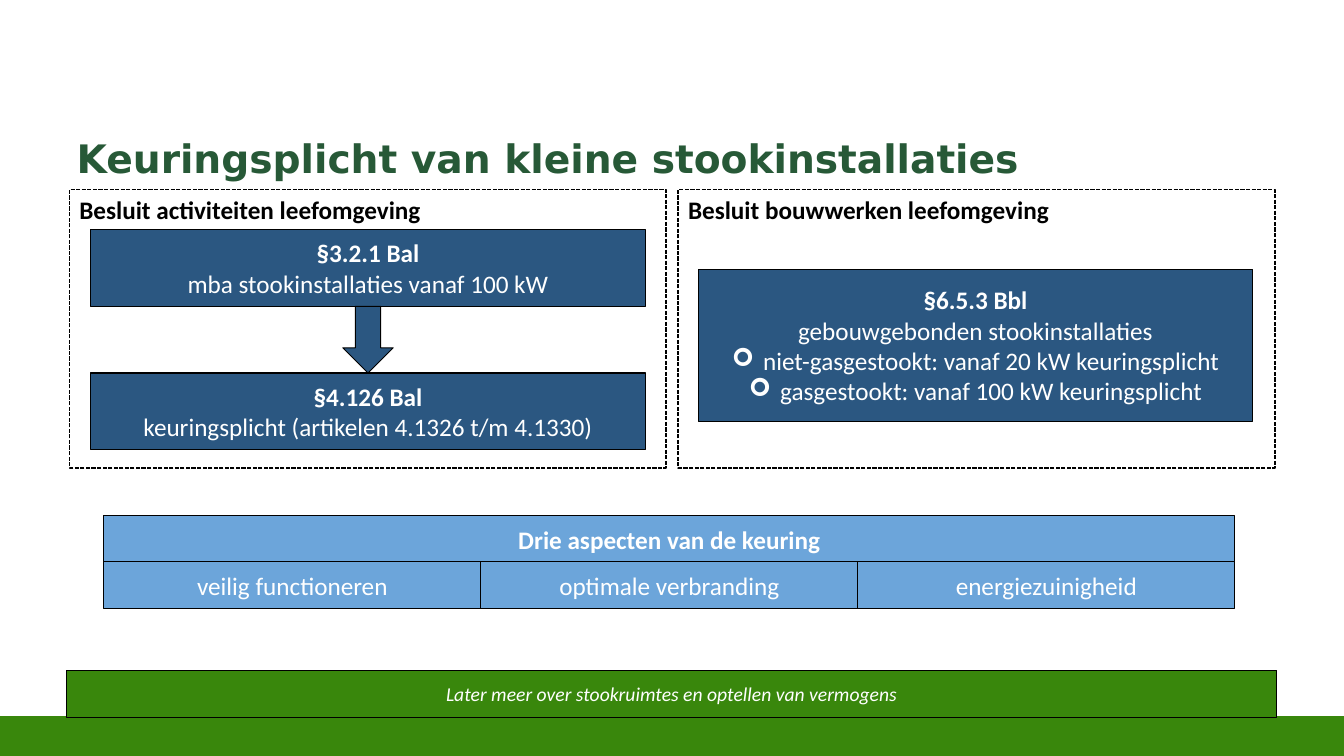
from lxml import etree
from pptx import Presentation
from pptx import util as u
from pptx.dml.color import RGBColor
from pptx.enum import dml, shapes, text
from pptx.oxml.ns import qn

GREEN, BLUE, LIGHT_BLUE = "39870C", "2B5781", "6CA5DA"
WHITE, BLACK, TITLE_GREEN = "FFFFFF", "000000", "275937"
BULLET = "➢"


def set_color(color_format, value):
    color_format.rgb = RGBColor.from_string(value)


def style_font(font, size, color, name="Calibri", bold=False, italic=False):
    font.name, font.size, font.bold, font.italic = name, u.Pt(size), bold, italic
    set_color(font.color, color)


def add_box(slide, left, top, width, height, fill=None, line=BLACK, weight=0.75,
            kind=shapes.MSO_SHAPE.RECTANGLE):
    shape = slide.shapes.add_shape(kind, u.Cm(left), u.Cm(top), u.Cm(width), u.Cm(height))
    shape.shadow.inherit = False
    if fill:
        shape.fill.solid()
        set_color(shape.fill.fore_color, fill)
    else:
        shape.fill.background()
    set_color(shape.line.color, line)
    shape.line.width = u.Pt(weight)
    return shape


def add_bullet(paragraph):
    properties = paragraph._p.get_or_add_pPr()
    properties.set("marL", str(u.Cm(0.79)))
    properties.set("indent", str(-u.Cm(0.79)))
    font = etree.SubElement(properties, qn("a:buFont"))
    font.set("typeface", "Wingdings")
    etree.SubElement(properties, qn("a:buChar")).set("char", BULLET)


def write_lines(shape, lines, heading=True, size=18, italic=False, color=WHITE,
                align=text.PP_ALIGN.CENTER, anchor=text.MSO_ANCHOR.MIDDLE, bullets_from=None):
    frame = shape.text_frame
    frame.word_wrap = True
    frame.vertical_anchor = anchor
    for index, line in enumerate(lines):
        paragraph = frame.paragraphs[0] if index == 0 else frame.add_paragraph()
        paragraph.text = line
        paragraph.alignment = align
        if bullets_from is not None and index >= bullets_from:
            add_bullet(paragraph)
        style_font(paragraph.font, size, color, bold=heading and index == 0, italic=italic)


def add_title(slide, words):
    title = slide.shapes.title
    title.left, title.top, title.width, title.height = (
        u.Cm(1.68), u.Cm(3.25), u.Cm(30.48), u.Cm(1.85))
    frame = title.text_frame
    frame.text = words
    frame.word_wrap = True
    frame.auto_size = text.MSO_AUTO_SIZE.NONE
    frame.vertical_anchor = text.MSO_ANCHOR.TOP
    paragraph = frame.paragraphs[0]
    paragraph.alignment = text.PP_ALIGN.LEFT
    style_font(paragraph.font, 28, TITLE_GREEN, name="DejaVu Sans", bold=True)


def add_decree_frame(slide, left, heading):
    frame = add_box(slide, left, 4.78, 15.04, 7.01, weight=1)
    frame.line.dash_style = dml.MSO_LINE.SQUARE_DOT
    write_lines(frame, [heading], color=BLACK, align=text.PP_ALIGN.LEFT,
                anchor=text.MSO_ANCHOR.TOP)


def add_aspects(slide, heading, aspects):
    left, top, width, height = 2.62, 13, 28.5, 1.19
    write_lines(add_box(slide, left, top, width, height, LIGHT_BLUE), [heading])
    column = width / len(aspects)
    for index, aspect in enumerate(aspects):
        cell = add_box(slide, left + index * column, top + 1.15, column, height, LIGHT_BLUE)
        write_lines(cell, [aspect], heading=False)


def main():
    """Build the slide on the inspection duty for small combustion plants."""
    presentation = Presentation()
    presentation.slide_width, presentation.slide_height = u.Cm(33.87), u.Cm(19.05)
    slide = presentation.slides.add_slide(presentation.slide_layouts[5])
    add_box(slide, 0, 18.08, 33.87, 0.98, GREEN, line=GREEN, weight=2)
    add_title(slide, "Keuringsplicht van kleine stookinstallaties")

    bal_sections = [
        (5.79, ["§3.2.1 Bal", "mba stookinstallaties vanaf 100 kW"]),
        (9.4, ["§4.126 Bal", "keuringsplicht (artikelen 4.1326 t/m 4.1330)"]),
    ]
    for top, lines in bal_sections:
        write_lines(add_box(slide, 2.29, top, 13.97, 1.93, BLUE), lines)
    bbl = add_box(slide, 17.6, 6.78, 13.97, 3.84, BLUE)
    write_lines(bbl, ["§6.5.3 Bbl", "gebouwgebonden stookinstallaties",
                      "niet-gasgestookt: vanaf 20 kW keuringsplicht",
                      "gasgestookt: vanaf 100 kW keuringsplicht"], bullets_from=2)
    add_box(slide, 8.64, 7.72, 1.27, 1.68, BLUE, kind=shapes.MSO_SHAPE.DOWN_ARROW)

    add_aspects(slide, "Drie aspecten van de keuring",
                ["veilig functioneren", "optimale verbranding", "energiezuinigheid"])
    later = add_box(slide, 1.68, 16.89, 30.5, 1.19, GREEN)
    write_lines(later, ["Later meer over stookruimtes en optellen van vermogens"],
                heading=False, size=14, italic=True)

    add_decree_frame(slide, 1.75, "Besluit activiteiten leefomgeving")
    add_decree_frame(slide, 17.09, "Besluit bouwwerken leefomgeving")
    presentation.save("out.pptx")


if __name__ == "__main__":
    main()
